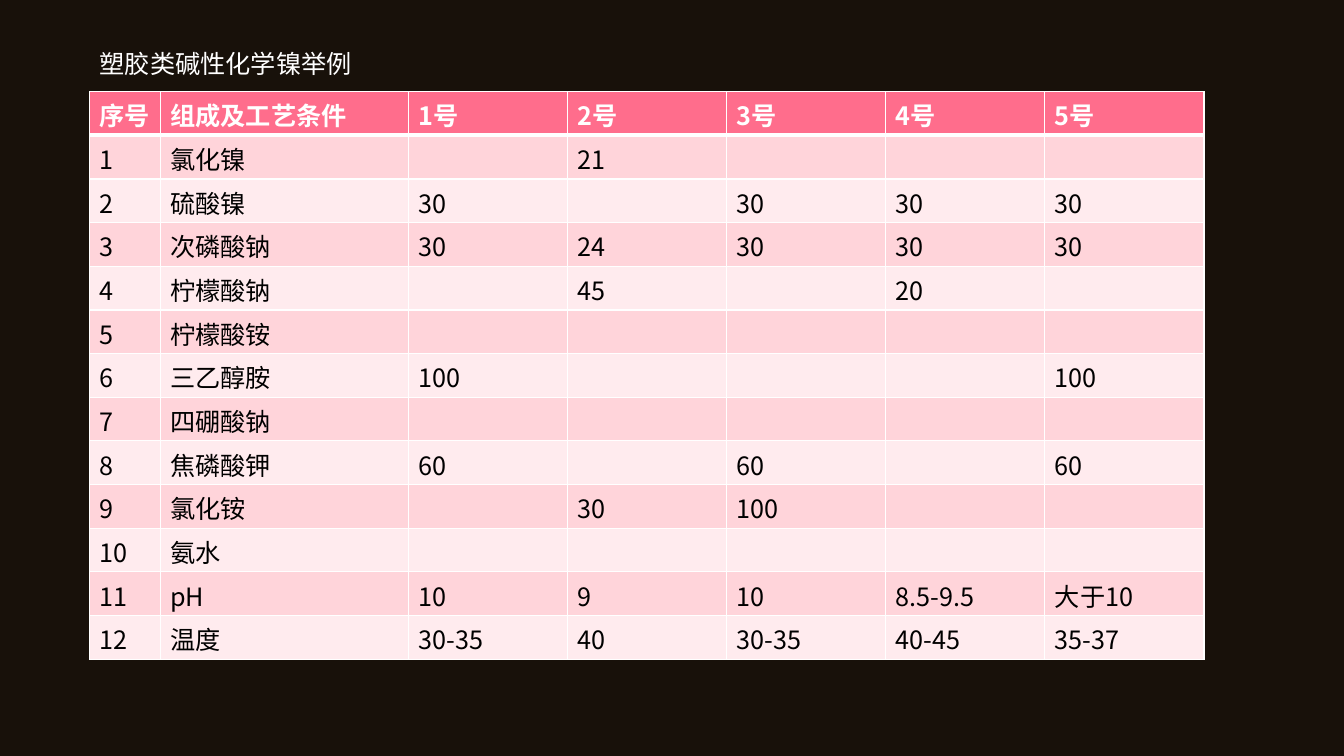
import pptx
import pptx.dml.color
import pptx.enum.text
import pptx.oxml
import pptx.oxml.ns
import pptx.util
from lxml import etree

Cm = pptx.util.Cm
Pt = pptx.util.Pt
FONT = "Noto Sans CJK SC"
COLOURS = {
    "background": "18110A",
    "header": "FF6D8C",
    "odd": "FFD4DA",
    "even": "FFEBEE",
    "light": "FFFFFF",
    "dark": "000000",
}
HEADINGS = ["序号", "组成及工艺条件", "1号", "2号", "3号", "4号", "5号"]
BATHS = [
    ["氯化镍", "", "21", "", "", ""],
    ["硫酸镍", "30", "", "30", "30", "30"],
    ["次磷酸钠", "30", "24", "30", "30", "30"],
    ["柠檬酸钠", "", "45", "", "20", ""],
    ["柠檬酸铵", "", "", "", "", ""],
    ["三乙醇胺", "100", "", "", "", "100"],
    ["四硼酸钠", "", "", "", "", ""],
    ["焦磷酸钾", "60", "", "60", "", "60"],
    ["氯化铵", "", "30", "100", "", ""],
    ["氨水", "", "", "", "", ""],
    ["pH", "10", "9", "10", "8.5-9.5", "大于10"],
    ["温度", "30-35", "40", "30-35", "40-45", "35-37"],
]
COLUMN_WIDTHS = [1.78, 6.25] + [4.01] * 5
ROW_HEIGHT = 1.1


def colour(name):
    """Return the named colour."""
    return pptx.dml.color.RGBColor.from_string(COLOURS[name])


def apply_format(target, values):
    """Set each attribute of the target from a dict."""
    for name, value in values.items():
        setattr(target, name, value)


def write_text(text_frame, text, colour_name, bold=False):
    """Write one left-aligned line in the slide's font."""
    paragraph = text_frame.paragraphs[0]
    paragraph.alignment = pptx.enum.text.PP_ALIGN.LEFT
    run = paragraph.add_run()
    run.text = text
    apply_format(run.font, {"size": Pt(18), "bold": bold, "name": FONT})
    run.font.color.rgb = colour(colour_name)
    east_asian = etree.SubElement(run.font._element, pptx.oxml.ns.qn("a:ea"))
    east_asian.set("typeface", FONT)


def add_borders(cell, top, bottom):
    """Draw white cell borders with the given top and bottom widths."""
    properties = cell._tc.get_or_add_tcPr()
    for side, width in {"L": 1, "R": 1, "T": top, "B": bottom}.items():
        properties.append(pptx.oxml.parse_xml(
            f'<a:ln{side} {pptx.oxml.ns.nsdecls("a")} w="{Pt(width)}"><a:solidFill>'
            f'<a:srgbClr val="{COLOURS["light"]}"/></a:solidFill></a:ln{side}>'))


def add_title(slide, left, top, width, height):
    """Place the slide title in its box."""
    title = slide.shapes.title
    apply_format(title, {"left": left, "top": top, "width": width, "height": height})
    apply_format(title.text_frame, {
        "word_wrap": True,
        "auto_size": pptx.enum.text.MSO_AUTO_SIZE.NONE,
        "vertical_anchor": pptx.enum.text.MSO_ANCHOR.TOP,
    })
    write_text(title.text_frame, "塑胶类碱性化学镍举例", "light")


def add_bath_table(slide, left, top):
    """Build the table of bath compositions and conditions."""
    rows = [HEADINGS] + [[str(number), *bath] for number, bath in enumerate(BATHS, 1)]
    table = slide.shapes.add_table(
        len(rows), len(HEADINGS), left, top,
        Cm(sum(COLUMN_WIDTHS)), Cm(ROW_HEIGHT * len(rows))).table
    for column, width in zip(table.columns, COLUMN_WIDTHS):
        column.width = Cm(width)
    for row_index, texts in enumerate(rows):
        table.rows[row_index].height = Cm(ROW_HEIGHT)
        is_header = row_index == 0
        fill_name = "header" if is_header else ("even", "odd")[row_index % 2]
        for column_index, text in enumerate(texts):
            cell = table.cell(row_index, column_index)
            add_borders(cell, 3 if row_index == 1 else 1, 3 if is_header else 1)
            cell.fill.solid()
            cell.fill.fore_color.rgb = colour(fill_name)
            cell.margin_bottom = 0
            if text:
                write_text(cell.text_frame, text, "light" if is_header else "dark", is_header)


def main():
    """Build and save the presentation."""
    presentation = pptx.Presentation()
    apply_format(presentation, {"slide_width": Cm(33.87), "slide_height": Cm(19.05)})
    slide = presentation.slides.add_slide(presentation.slide_layouts[5])
    slide.background.fill.solid()
    slide.background.fill.fore_color.rgb = colour("background")
    add_bath_table(slide, Cm(2.26), Cm(2.31))
    add_title(slide, Cm(2.26), Cm(1.09), Cm(11.28), Cm(1.02))
    presentation.save("out.pptx")


if __name__ == "__main__":
    main()
